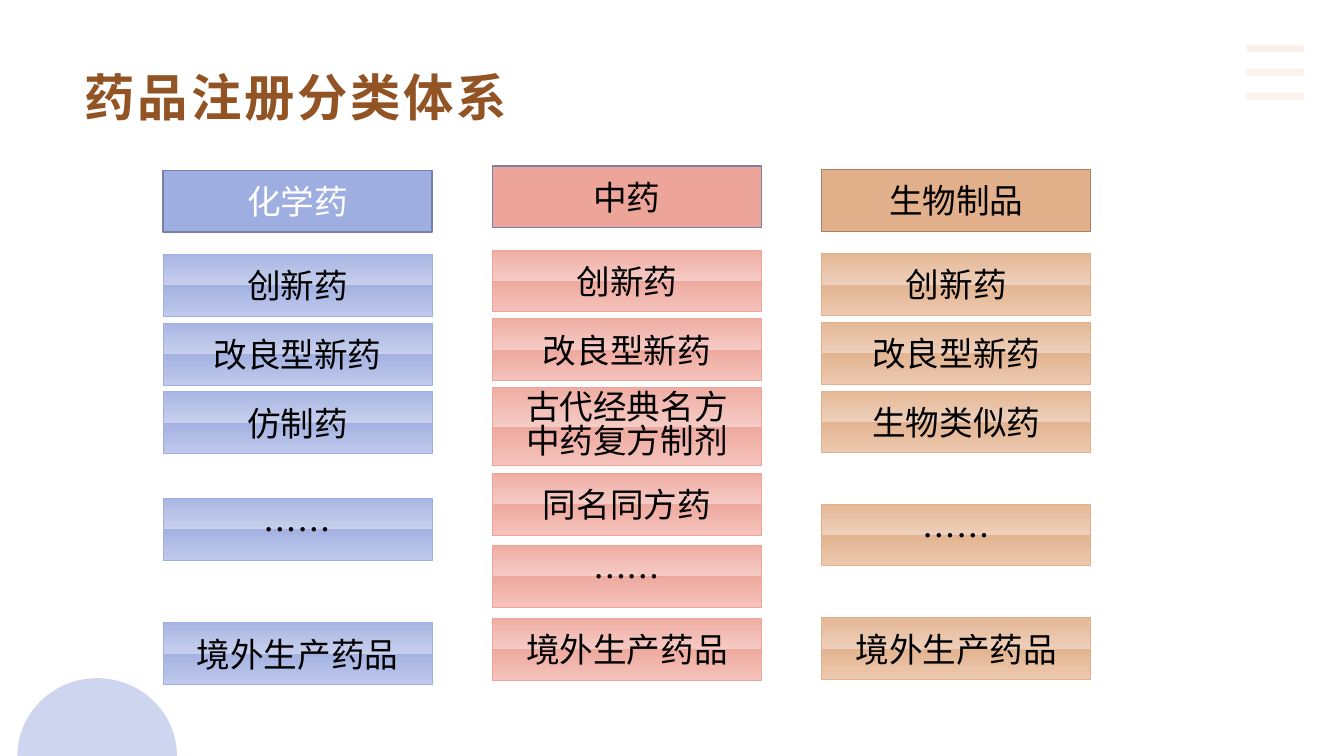
import math
from dataclasses import dataclass

from lxml import etree
from pptx import Presentation
from pptx.dml.color import RGBColor
from pptx.enum import shapes, text
from pptx.oxml.ns import qn
from pptx.util import Cm, Pt


@dataclass(frozen=True)
class Theme:
    font: str = "Noto Sans CJK SC"
    title_size: int = 36
    body_size: int = 24
    title: str = "925424"
    dark: str = "000000"
    light: str = "FFFFFF"
    blue: str = "9FAEE0"
    pink: str = "EDA499"
    tan: str = "E2B08A"
    slate: str = "7681A6"
    brown: str = "A78266"
    blue_gloss: tuple = ("A9B6E3", "C7CFED", "A4B2E2", "BFC9EC")
    pink_gloss: tuple = ("EFADA3", "F5CBC5", "EEA99E", "F5C3BC")
    tan_gloss: tuple = ("E5B896", "EECFBB", "E3B490", "EDC9B0")


T = Theme()
COL_LEFT, COL_PITCH, COL_W = 4.11, 8.3, 6.78
BOX_H, FIRST_ROW, ROW_PITCH = 1.56, 2.12, 1.73

# Rows are (text, offset below the header's top, height).
def steps(*names):
    return [(n, FIRST_ROW + i * ROW_PITCH, BOX_H) for i, n in enumerate(names)]


COLUMNS = [
    dict(head="化学药", top=4.29, color=T.blue, edge=T.slate, ink=T.light, gloss=T.blue_gloss,
         rows=steps("创新药", "改良型新药", "仿制药")
         + [("……", 8.26, BOX_H), ("境外生产药品", 11.4, BOX_H)]),
    dict(head="中药", top=4.18, color=T.pink, edge=T.slate, ink=T.dark, gloss=T.pink_gloss,
         rows=steps("创新药", "改良型新药")
         + [("古代经典名方\n中药复方制剂", 5.58, 1.98), ("同名同方药", 7.74, BOX_H),
            ("……", 9.56, BOX_H), ("境外生产药品", 11.4, BOX_H)]),
    dict(head="生物制品", top=4.27, color=T.tan, edge=T.brown, ink=T.dark, gloss=T.tan_gloss,
         rows=steps("创新药", "改良型新药", "生物类似药")
         + [("……", 8.43, BOX_H), ("境外生产药品", 11.3, BOX_H)]),
]


def rgb(value):
    return RGBColor.from_string(value)


def write(p, words, size, color, bold=False, spacing=0):
    """Put one run in p; its East Asian font matches its Latin one."""
    r = p.add_run()
    r.text = words
    for font in (p.font, r.font):
        font.name, font.size, font.bold = T.font, Pt(size), bold
        font.color.rgb = rgb(color)
    rPr = r._r.get_or_add_rPr()
    rPr.find(qn("a:latin")).addnext(rPr.makeelement(qn("a:ea"), {"typeface": T.font}))
    if spacing:
        rPr.set("spc", str(spacing * 100))


def set_alpha(fill_parent, percent):
    color = next(fill_parent.iter(qn("a:srgbClr")))
    etree.SubElement(color, qn("a:alpha"), val=str(percent * 1000))


def gloss_fill(sp, colors):
    """Two vertical gradients that meet sharply at mid height."""
    sp.fill.gradient()
    sp.fill.gradient_angle = 270
    stops = next(sp._element.spPr.iter(qn("a:gsLst")))
    for old in list(stops):
        stops.remove(old)
    for pos, color in zip((0, 50, 50, 100), colors):
        gs = etree.SubElement(stops, qn("a:gs"), pos=str(pos * 1000))
        etree.SubElement(gs, qn("a:srgbClr"), val=color)


def add_box(s, words, left, top, width, height, edge, edge_width, ink):
    sp = s.shapes.add_shape(shapes.MSO_SHAPE.RECTANGLE, Cm(left), Cm(top), Cm(width), Cm(height))
    sp.shadow.inherit = False
    sp.line.color.rgb = rgb(edge)
    sp.line.width = Pt(edge_width)
    tf = sp.text_frame
    tf.word_wrap = True
    tf.vertical_anchor = text.MSO_ANCHOR.MIDDLE
    lines = words.split("\n")
    for i, line in enumerate(lines):
        p = tf.add_paragraph() if i else tf.paragraphs[0]
        p.alignment = text.PP_ALIGN.CENTER
        if len(lines) > 1:
            p.line_spacing = 0.82
        write(p, line, T.body_size, ink)
    return sp


def add_column(s, left, width, head, top, color, edge, ink, gloss, rows):
    sp = add_box(s, head, left, top, width, BOX_H, edge, 1, ink)
    sp.fill.solid()
    sp.fill.fore_color.rgb = rgb(color)
    for words, offset, height in rows:
        sp = add_box(s, words, left, top + offset, width, height, color, 0.5, T.dark)
        gloss_fill(sp, gloss)


def add_title(s, left, top, width, height):
    title = s.shapes.title
    title.left, title.top, title.width, title.height = map(Cm, (left, top, width, height))
    tf = title.text_frame
    tf.word_wrap = True
    tf.vertical_anchor = text.MSO_ANCHOR.TOP
    p = tf.paragraphs[0]
    p.alignment = text.PP_ALIGN.LEFT
    p.line_spacing = 0.9
    write(p, "药品注册分类体系", T.title_size, T.title, bold=True, spacing=2)


def add_menu_bars(s, left, top, width, gap):
    for i in range(3):
        y = Cm(top + i * gap)
        bar = s.shapes.add_connector(shapes.MSO_CONNECTOR.STRAIGHT, Cm(left), y, Cm(left + width), y)
        bar.line.color.rgb = rgb(T.tan)
        bar.line.width = Pt(5)
        spPr = bar._element.spPr
        set_alpha(spPr, 16)
        etree.SubElement(spPr, qn("a:effectLst"))


def add_dome(s, left, top, width, height):
    """Half disc, flat side down."""
    points = [(Cm(left + width / 2 * (1 - math.cos(a))), Cm(top + height * (1 - math.sin(a))))
              for a in (math.pi * i / 90 for i in range(91))]
    builder = s.shapes.build_freeform(*points[0])
    builder.add_line_segments(points[1:], close=True)
    dome = builder.convert_to_shape()
    dome.shadow.inherit = False
    dome.fill.solid()
    dome.fill.fore_color.rgb = rgb(T.blue)
    set_alpha(dome._element.spPr, 50)
    dome.line.fill.background()


def main():
    prs = Presentation()
    prs.slide_width, prs.slide_height = Cm(33.87), Cm(19.05)
    s = prs.slides.add_slide(prs.slide_layouts[5])
    add_menu_bars(s, 31.42, 1.22, 1.45, 0.6)
    add_dome(s, 0.44, 17.09, 4.02, 1.96)
    add_title(s, 1.88, 1.7, 23.88, 3.66)
    for i, column in enumerate(COLUMNS):
        add_column(s, COL_LEFT + i * COL_PITCH, COL_W, **column)
    prs.save("out.pptx")


if __name__ == "__main__":
    main()
